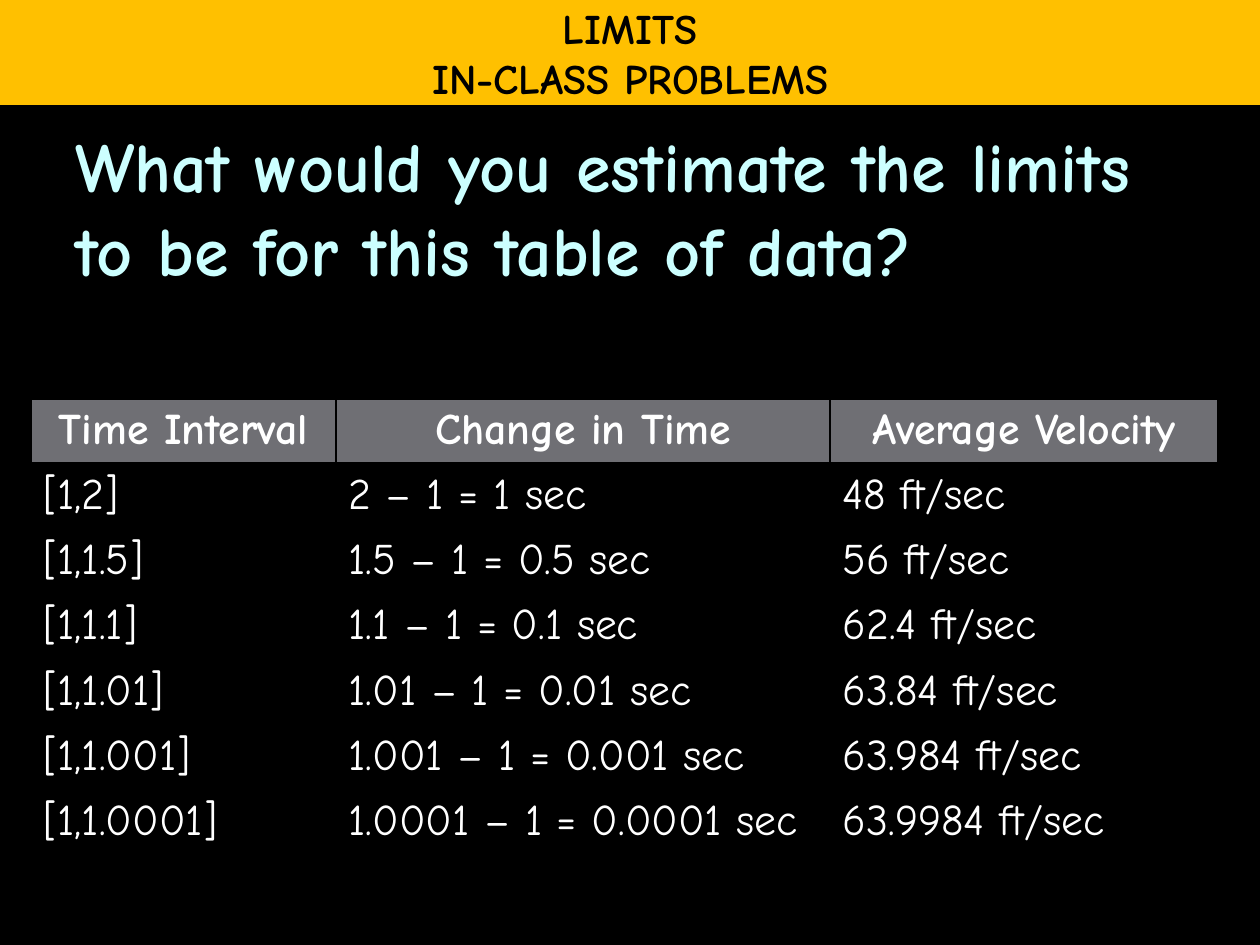
from dataclasses import dataclass

from lxml.etree import SubElement
from pptx import Presentation
from pptx.dml.color import RGBColor
from pptx.enum.shapes import MSO_SHAPE
from pptx.enum.text import MSO_ANCHOR, PP_ALIGN
from pptx.oxml.ns import qn
from pptx.slide import Slide
from pptx.util import Emu, Pt

PX = 914400 // 126
BLACK = RGBColor(0x00, 0x00, 0x00)
WHITE = RGBColor(0xFF, 0xFF, 0xFF)
AMBER = RGBColor(0xFF, 0xC0, 0x00)
PALE_CYAN = RGBColor(0xCC, 0xFF, 0xFF)
GRAY = RGBColor(0x6F, 0x6F, 0x74)

COLUMN_WIDTHS = [305, 494, 388]
ROW_HEIGHT = 52
ROWS = [
    ("Time Interval", "Change in Time", "Average Velocity"),
    ("[1,2]", "2 – 1 = 1 sec", "48 ft/sec"),
    ("[1,1.5]", "1.5 – 1 = 0.5 sec", "56 ft/sec"),
    ("[1,1.1]", "1.1 – 1 = 0.1 sec", "62.4 ft/sec"),
    ("[1,1.01]", "1.01 – 1 = 0.01 sec", "63.84 ft/sec"),
    ("[1,1.001]", "1.001 – 1 = 0.001 sec", "63.984 ft/sec"),
    ("[1,1.0001]", "1.0001 – 1 = 0.0001 sec", "63.9984 ft/sec"),
]


def scaled(*lengths):
    return [Emu(length * PX) for length in lengths]


def set_borders(cell, bottom_width):
    """Give the cell black borders, 1 pt except at the bottom."""
    properties = cell._tc.get_or_add_tcPr()
    widths = {"a:lnL": 1, "a:lnR": 1, "a:lnT": 1, "a:lnB": bottom_width}
    for position, (tag, width) in enumerate(widths.items()):
        line = SubElement(properties, qn(tag), w=str(Pt(width)))
        fill = SubElement(line, qn("a:solidFill"))
        SubElement(fill, qn("a:srgbClr"), val=str(BLACK))
        properties.insert(position, line)


@dataclass
class LessonSlide:
    slide: Slide
    font: str = "Comic Neue"

    def set_text(self, frame, text, size, color, bold=True,
                 align=PP_ALIGN.LEFT):
        frame.text = text
        for para in frame.paragraphs:
            para.alignment = align
            for span in para.runs:
                span.font.name = self.font
                span.font.size = Pt(size)
                span.font.bold = bold
                span.font.color.rgb = color

    def question(self, text, left, top, width, height):
        box = self.slide.shapes.add_textbox(*scaled(left, top, width, height))
        box.text_frame.word_wrap = True
        self.set_text(box.text_frame, text, 40, PALE_CYAN)

    def banner(self, text, left, top, width, height):
        bar = self.slide.shapes.add_shape(
            MSO_SHAPE.RECTANGLE, *scaled(left, top, width, height))
        bar.shadow.inherit = False
        bar.fill.solid()
        bar.fill.fore_color.rgb = AMBER
        bar.line.fill.background()
        bar.text_frame.word_wrap = False
        bar.text_frame.vertical_anchor = MSO_ANCHOR.MIDDLE
        self.set_text(bar.text_frame, text, 24, BLACK, align=PP_ALIGN.CENTER)

    def table(self, rows, left, top, column_widths, row_height):
        frame = self.slide.shapes.add_table(
            len(rows), len(column_widths),
            *scaled(left, top, sum(column_widths), row_height * len(rows)))
        table = frame.table
        table.horz_banding = False
        for column, width in zip(table.columns, scaled(*column_widths)):
            column.width = width
        for row_index, row in enumerate(rows):
            header = row_index == 0
            for column_index, text in enumerate(row):
                cell = table.cell(row_index, column_index)
                cell.fill.solid()
                cell.fill.fore_color.rgb = GRAY if header else BLACK
                self.set_text(
                    cell.text_frame, text, 25, WHITE, bold=header,
                    align=PP_ALIGN.CENTER if header else PP_ALIGN.LEFT)
                set_borders(cell, 3 if header else 1)


def main():
    deck = Presentation()
    deck.slide_width, deck.slide_height = scaled(1260, 945)
    page = deck.slides.add_slide(deck.slide_layouts[6])
    page.background.fill.solid()
    page.background.fill.fore_color.rgb = BLACK

    lesson = LessonSlide(page)
    lesson.question(
        "What would you estimate the limits to be for this table of data?",
        63, 116, 1134, 388)
    lesson.banner("LIMITS\nIN-CLASS PROBLEMS", 0, 0, 1260, 105)
    lesson.table(ROWS, 31, 399, COLUMN_WIDTHS, ROW_HEIGHT)
    deck.save("out.pptx")


if __name__ == "__main__":
    main()
